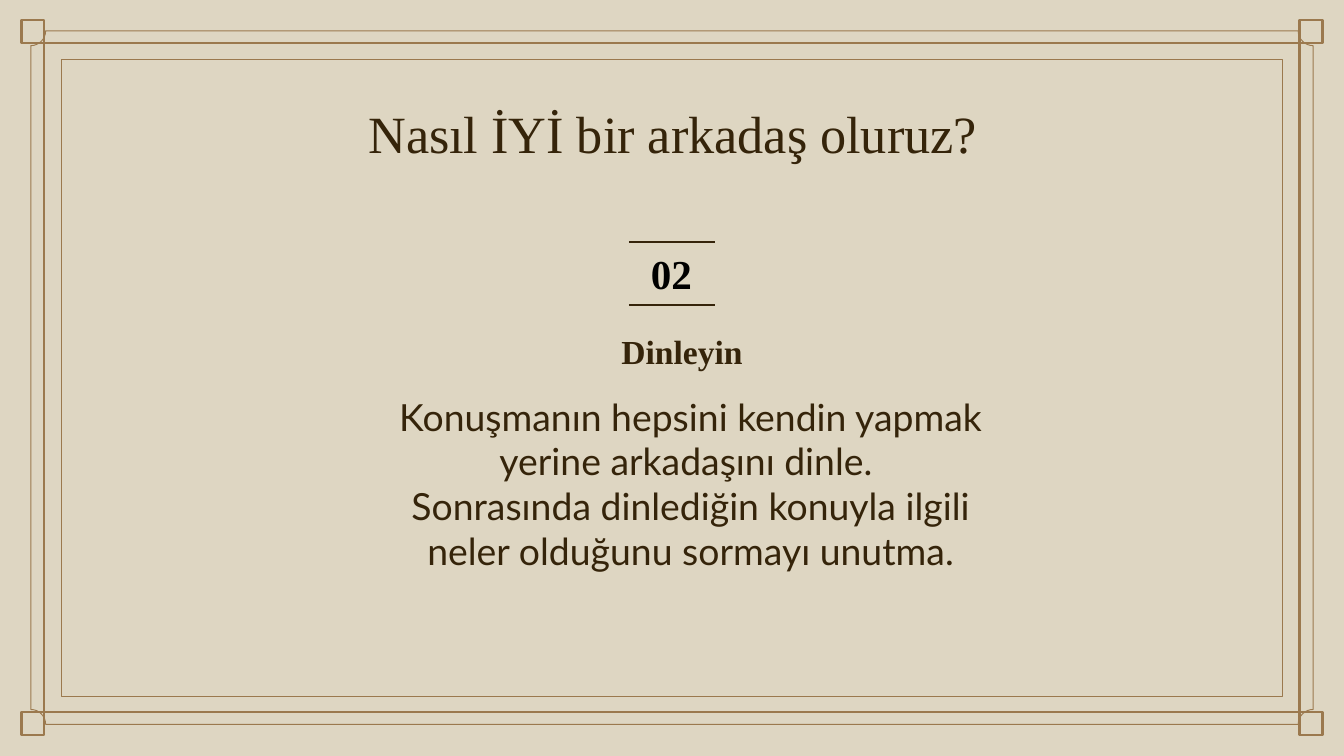
from dataclasses import dataclass
from math import cos, pi, sin

from lxml.etree import SubElement
from pptx import Presentation
from pptx.dml.color import RGBColor
from pptx.enum.shapes import MSO_CONNECTOR, MSO_SHAPE
from pptx.enum.text import MSO_ANCHOR, PP_ALIGN
from pptx.oxml.ns import qn
from pptx.util import Inches, Pt


@dataclass(frozen=True)
class Theme:
    paper: RGBColor = RGBColor.from_string("DED6C2")
    gold: RGBColor = RGBColor.from_string("9B794E")
    ink: RGBColor = RGBColor.from_string("35240A")
    black: RGBColor = RGBColor.from_string("000000")
    serif: str = "Times New Roman"
    sans: str = "Lato"
    title: float = 28
    number: float = 22
    head: float = 18
    body: float = 20
    thick: float = 1.28
    thin: float = 0.5
    rule: float = 0.75


THEME = Theme()


def outline(shape, width):
    shape.shadow.inherit = False
    shape.fill.background()
    shape.line.color.rgb = THEME.gold
    shape.line.width = Pt(width)


def add_rect(slide, box, width):
    shape = slide.shapes.add_shape(MSO_SHAPE.RECTANGLE, *map(Inches, box))
    outline(shape, width)


def add_notched(slide, box, radius, width):
    left, top, wide, high = box
    right, bottom = left + wide, top + high
    corners = [(left, top, 90), (right, top, 180),
               (right, bottom, 270), (left, bottom, 360)]
    steps = 8
    points = []
    for x, y, start in corners:
        for step in range(steps + 1):
            angle = (start - 90 * step / steps) * pi / 180
            points.append((Inches(x + radius * cos(angle)),
                           Inches(y + radius * sin(angle))))
    builder = slide.shapes.build_freeform(*points[0])
    builder.add_line_segments(points[1:], close=True)
    outline(builder.convert_to_shape(), width)


def add_frame(slide, box):
    left, top, wide, high = box
    side = 0.17
    for x in (left, left + wide - side):
        for y in (top, top + high - side):
            add_rect(slide, (x, y, side, side), THEME.thick)

    def inset(across, down):
        return (left + across, top + down,
                wide - 2 * across, high - 2 * down)

    add_rect(slide, inset(side, side), THEME.thick)
    add_rect(slide, inset(0.3, 0.29), THEME.thin)
    add_notched(slide, inset(0.07, 0.08), 0.11, THEME.thin)


def add_text(slide, box, lines, size, face, color, bold=False,
             pad=0.1, anchor=MSO_ANCHOR.TOP):
    frame = slide.shapes.add_textbox(*map(Inches, box)).text_frame
    frame.word_wrap = True
    frame.vertical_anchor = anchor
    frame.margin_left = frame.margin_right = Inches(0.1)
    frame.margin_top = frame.margin_bottom = Inches(pad)
    frame.text = "\n".join(lines)
    for para in frame.paragraphs:
        para.alignment = PP_ALIGN.CENTER
        para.font.size = Pt(size)
        para.font.name = face
        para.font.bold = bold
        para.font.color.rgb = color
    return frame


def add_rule(slide, left, right, y):
    line = slide.shapes.add_connector(
        MSO_CONNECTOR.STRAIGHT, *map(Inches, (left, y, right, y)))
    line.line.color.rgb = THEME.ink
    line.line.width = Pt(THEME.rule)
    SubElement(line._element.spPr, qn("a:effectLst"))


def add_badge(slide, box, label):
    left, top, wide, high = box
    for y in (top, top + high):
        add_rule(slide, left, left + wide, y)
    add_text(slide, (left - 0.08, top, wide + 0.15, high), [label],
             THEME.number, THEME.serif, THEME.black, True,
             anchor=MSO_ANCHOR.MIDDLE)


def add_advice(slide, box, head, lines):
    left, top, wide, high = box
    frame = add_text(slide, (left + 0.78, top, 2.88, 0.49), [head],
                     THEME.head, THEME.serif, THEME.ink, True)
    para = frame.paragraphs[0]
    para.line_spacing = 1.15
    para._p.get_or_add_pPr().set("marL", str(Inches(0.15)))
    add_text(slide, (left, top + 0.56, wide, high - 0.56), lines,
             THEME.body, THEME.sans, THEME.ink, pad=0.05)


def main():
    deck = Presentation()
    deck.slide_width = Inches(10)
    deck.slide_height = deck.slide_width * 9 // 16
    slide = deck.slides.add_slide(deck.slide_layouts[6])
    slide.background.fill.solid()
    slide.background.fill.fore_color.rgb = THEME.paper
    add_frame(slide, (0.16, 0.15, 9.68, 5.32))
    add_text(slide, (0.79, 0.65, 8.43, 0.63),
             ["Nasıl İYİ bir arkadaş oluruz?"],
             THEME.title, THEME.serif, THEME.ink)
    add_badge(slide, (4.68, 1.8, 0.64, 0.47), "02")
    add_advice(slide, (2.78, 2.32, 4.72, 2.01), "Dinleyin", [
        "Konuşmanın hepsini kendin yapmak yerine arkadaşını dinle. ",
        "Sonrasında dinlediğin konuyla ilgili neler olduğunu sormayı unutma.",
    ])
    deck.save("out.pptx")


if __name__ == "__main__":
    main()
